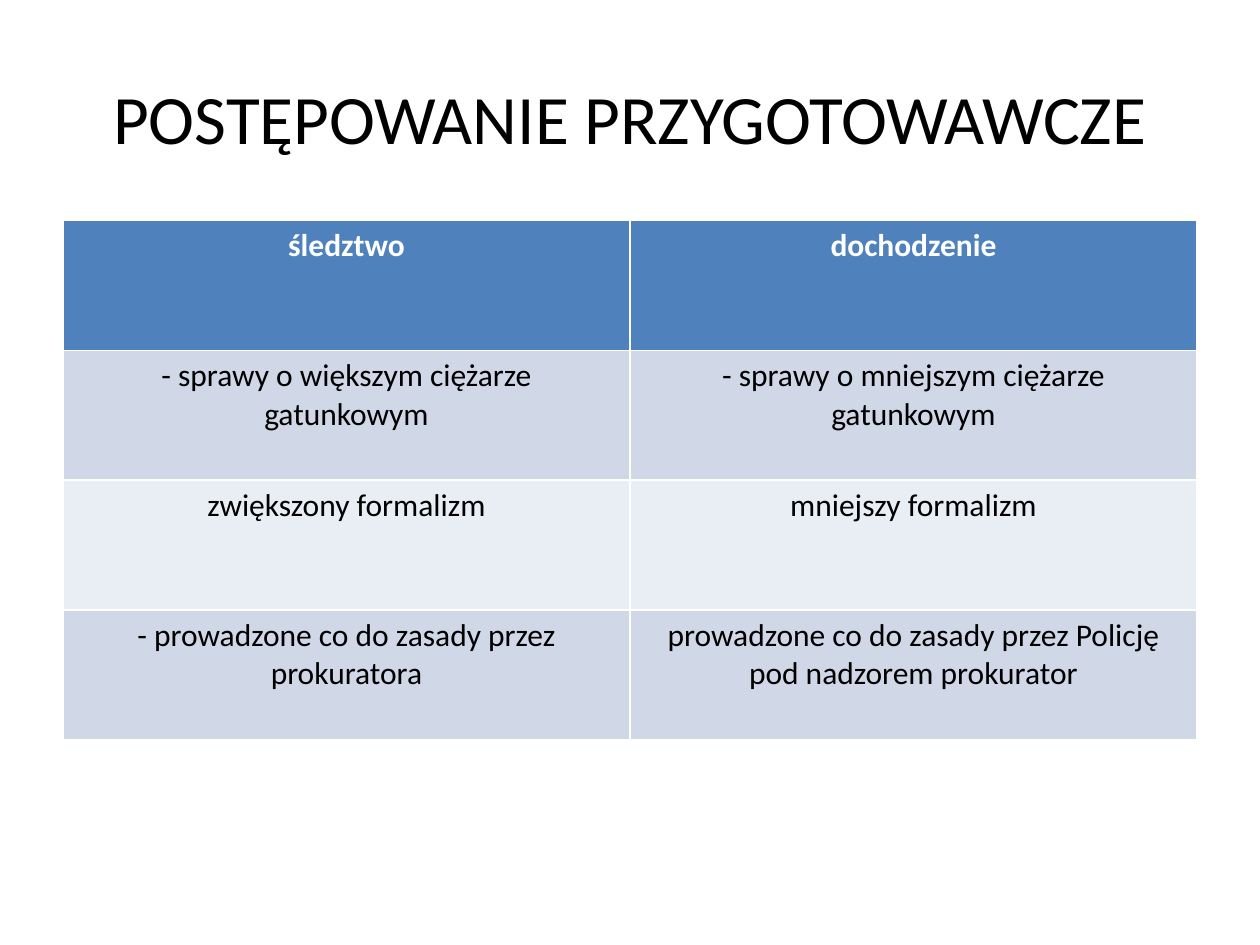
from pptx import Presentation
from pptx.dml.color import RGBColor
from pptx.enum.text import MSO_ANCHOR, PP_ALIGN
from pptx.util import Inches, Pt

hues = {"head": "4F81BD", "dark": "D0D8E8", "light": "E9EDF4",
        "white": "FFFFFF", "black": "000000"}
rows = [
    ("śledztwo", "dochodzenie"),
    ("- sprawy o większym ciężarze gatunkowym",
     "- sprawy o mniejszym ciężarze gatunkowym"),
    ("zwiększony formalizm", "mniejszy formalizm"),
    ("- prowadzone co do zasady przez prokuratora",
     "prowadzone co do zasady przez Policję pod nadzorem prokurator"),
]
fills = ["head", "dark", "light", "dark"]


def write(frame, text, hue, style):
    para = frame.paragraphs[0]
    para.alignment = PP_ALIGN.CENTER
    run = para.add_run()
    run.text = text
    for key, value in style.items():
        setattr(run.font, key, value)
    run.font.color.rgb = RGBColor.from_string(hues[hue])


deck = Presentation()
deck.slide_width, deck.slide_height = Inches(10), Inches(7.5)
slide = deck.slides.add_slide(deck.slide_layouts[6])

title = slide.shapes.add_textbox(Inches(0.5), Inches(0.3), Inches(9), Inches(1.25))
frame = title.text_frame
for key, value in {"word_wrap": True, "vertical_anchor": MSO_ANCHOR.MIDDLE}.items():
    setattr(frame, key, value)
write(frame, "POSTĘPOWANIE PRZYGOTOWAWCZE", "black",
      {"name": "Calibri", "size": Pt(39.6)})

table = slide.shapes.add_table(len(rows), 2, Inches(0.5), Inches(1.75),
                               Inches(9), Inches(1.03) * len(rows)).table
for r, (texts, fill) in enumerate(zip(rows, fills)):
    head = r == 0
    style = {"name": "Calibri", "size": Pt(18), "bold": head}
    for c, text in enumerate(texts):
        cell = table.cell(r, c)
        cell.fill.solid()
        cell.fill.fore_color.rgb = RGBColor.from_string(hues[fill])
        write(cell.text_frame, text, "white" if head else "black", style)

deck.save("out.pptx")
